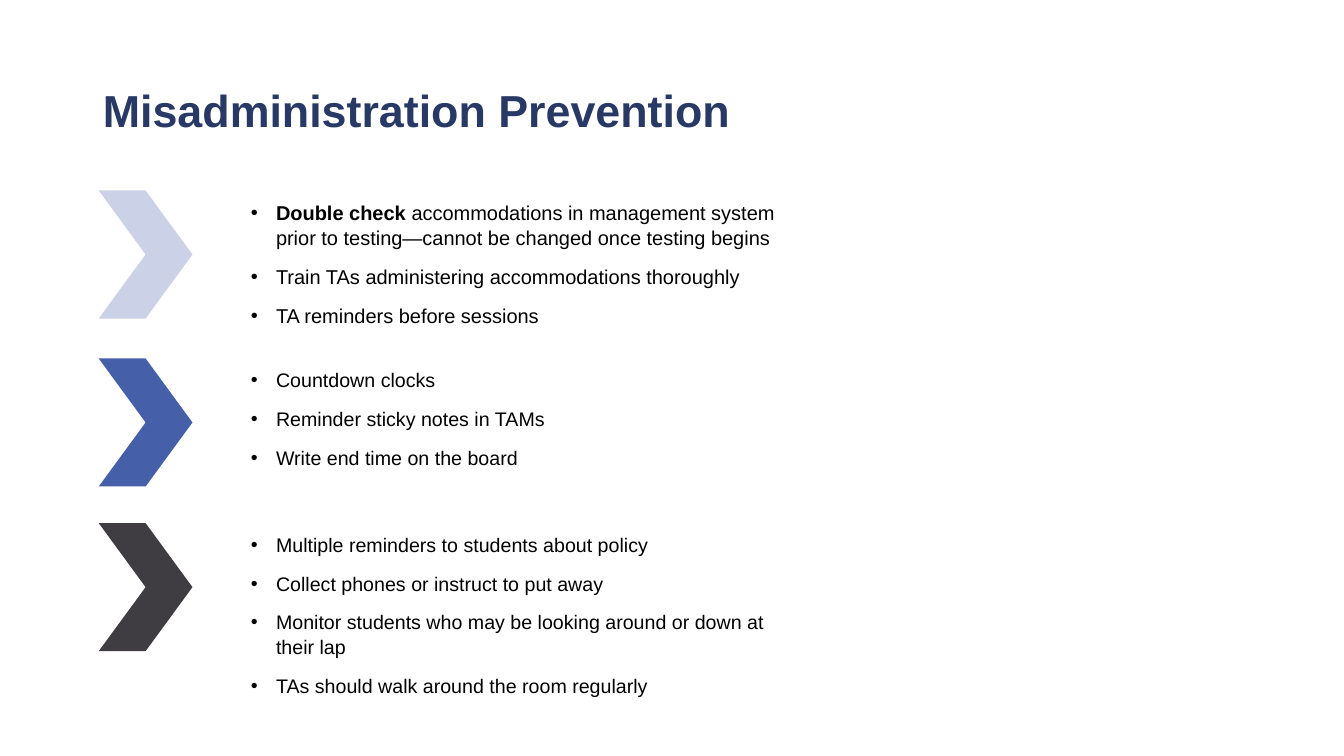
from dataclasses import dataclass

from lxml import etree
from pptx import Presentation
from pptx.dml.color import RGBColor
from pptx.enum.shapes import MSO_SHAPE
from pptx.enum.text import MSO_ANCHOR, MSO_AUTO_SIZE, PP_ALIGN
from pptx.oxml.ns import qn
from pptx.slide import Slide
from pptx.text.text import TextFrame, _Paragraph
from pptx.util import Pt

CHEVRON = MSO_SHAPE.CHEVRON
MIDDLE = MSO_ANCHOR.MIDDLE
TOP = MSO_ANCHOR.TOP
NO_AUTOFIT = MSO_AUTO_SIZE.NONE
LEFT = PP_ALIGN.LEFT

FONT = "Arial"
NAVY = "293965"
BLACK = "000000"
BULLET_INDENT = 18
CHEVRON_LEFT, CHEVRON_WIDTH, CHEVRON_HEIGHT = 70.56, 66.96, 91.44
ADVICE_LEFT, ADVICE_WIDTH = 172.08, 408.24
ADVICE_DROP = 2.6


@dataclass(frozen=True)
class Advice:
    top: float
    height: float
    color: str
    size: float
    tips: tuple[str, ...]
    lead: str = ""


ADVICE_GROUPS = (
    Advice(136.08, 117.36, "CBD1E7", 14.3, (
        "accommodations in management system prior to testing—cannot be changed once testing begins",
        "Train TAs administering accommodations thoroughly",
        "TA reminders before sessions",
    ), lead="Double check "),
    Advice(256.08, 86.4, "455FA9", 14, (
        "Countdown clocks",
        "Reminder sticky notes in TAMs",
        "Write end time on the board",
    )),
    Advice(373.68, 86.4, "403D42", 14, (
        "Multiple reminders to students about policy",
        "Collect phones or instruct to put away",
        "Monitor students who may be looking around or down at their lap",
        "TAs should walk around the room regularly",
    )),
)


def rgb(color: str) -> RGBColor:
    return RGBColor.from_string(color)


def add_text(paragraph: _Paragraph, text: str, *, size: float,
             color: str = BLACK, bold: bool = False) -> None:
    run = paragraph.add_run()
    run.text = text
    run.font.name = FONT
    run.font.size = Pt(size)
    run.font.bold = bold
    run.font.color.rgb = rgb(color)


def prepare_frame(frame: TextFrame, anchor: MSO_ANCHOR) -> None:
    frame.word_wrap = True
    frame.auto_size = NO_AUTOFIT
    frame.vertical_anchor = anchor


def format_bullet(paragraph: _Paragraph) -> None:
    paragraph.alignment = LEFT
    paragraph.line_spacing = 1.05
    paragraph.space_before = Pt(10)
    properties = paragraph._p.get_or_add_pPr()
    properties.set("marL", str(Pt(BULLET_INDENT)))
    properties.set("indent", str(-Pt(BULLET_INDENT)))
    etree.SubElement(properties, qn("a:buFont")).set("typeface", FONT)
    etree.SubElement(properties, qn("a:buChar")).set("char", "•")


def add_title(slide: Slide, text: str) -> None:
    title = slide.shapes.title
    title.left, title.top, title.width, title.height = Pt(66.24), Pt(28.8), Pt(828), Pt(104.4)
    prepare_frame(title.text_frame, MIDDLE)
    heading = title.text_frame.paragraphs[0]
    heading.alignment = LEFT
    heading.line_spacing = 0.9
    add_text(heading, text, size=32, color=NAVY, bold=True)


def add_advice(slide: Slide, advice: Advice) -> None:
    tips_box = slide.shapes.add_textbox(
        Pt(ADVICE_LEFT), Pt(advice.top + ADVICE_DROP), Pt(ADVICE_WIDTH), Pt(advice.height))
    frame = tips_box.text_frame
    prepare_frame(frame, TOP)
    for index, tip in enumerate(advice.tips):
        paragraph = frame.add_paragraph() if index else frame.paragraphs[0]
        format_bullet(paragraph)
        if advice.lead and index == 0:
            add_text(paragraph, advice.lead, size=advice.size, bold=True)
        add_text(paragraph, tip, size=advice.size)

    chevron = slide.shapes.add_shape(
        CHEVRON, Pt(CHEVRON_LEFT), Pt(advice.top), Pt(CHEVRON_WIDTH), Pt(CHEVRON_HEIGHT))
    chevron.shadow.inherit = False
    chevron.fill.solid()
    chevron.fill.fore_color.rgb = rgb(advice.color)
    chevron.line.fill.background()


def main() -> None:
    presentation = Presentation()
    presentation.slide_width, presentation.slide_height = Pt(960), Pt(540)
    title_only = presentation.slide_layouts.get_by_name("Title Only")
    slide = presentation.slides.add_slide(title_only)
    add_title(slide, "Misadministration Prevention")
    for advice in ADVICE_GROUPS:
        add_advice(slide, advice)
    presentation.save("out.pptx")


if __name__ == "__main__":
    main()
